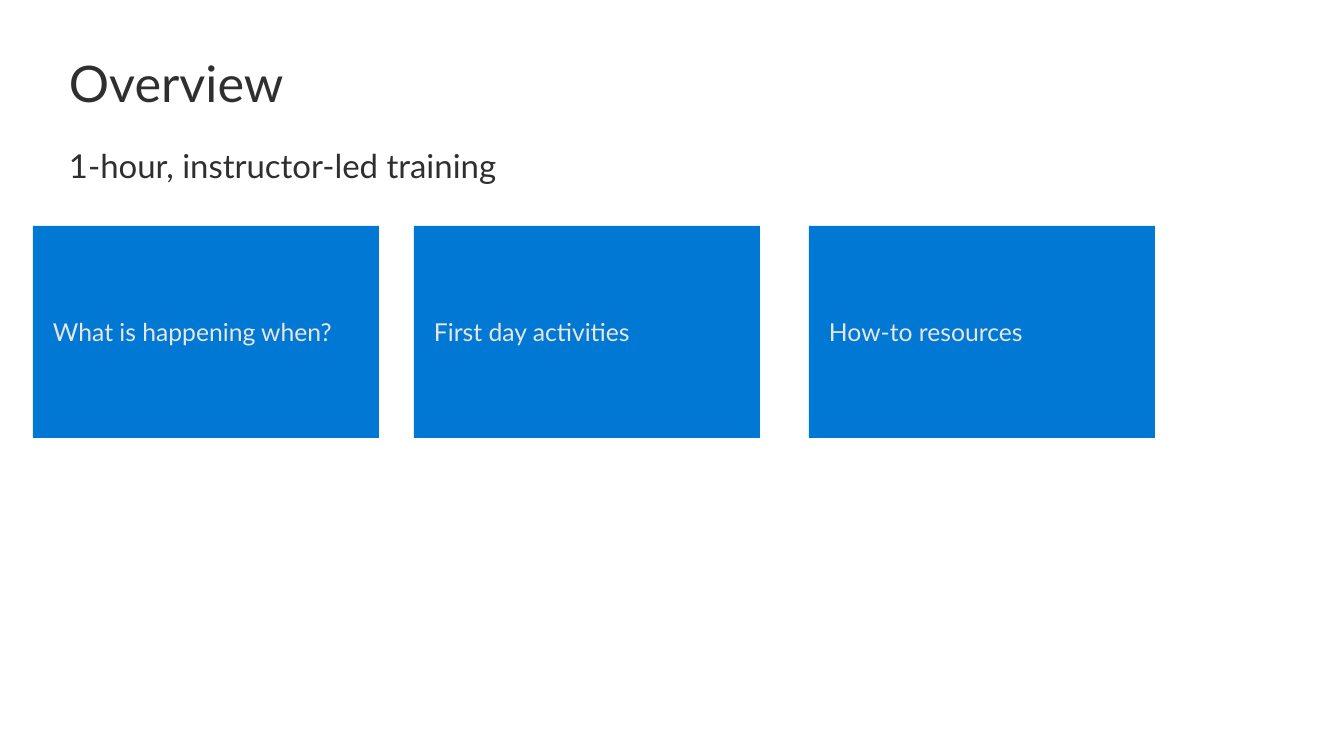
import pptx
import pptx.dml.color
import pptx.enum.shapes
import pptx.enum.text
import pptx.util

PX = 914400 / 98.8
SIZE = (1344, 756)
FONT = "Lato"
DARK, BLUE, PALE = "2F2F2F", "0078D4", "E6E6E6"

# text, top, height, point size
HEADS = [
    ("Overview", 54, 99, 36.7),
    ("1-hour, instructor-led training", 145, 56, 24),
]
HEAD_LEFT, HEAD_WIDTH = 59, 1284

# text, left
CARDS = [
    ("What is happening when?", 33),
    ("First day activities", 414),
    ("How-to resources", 809),
]
CARD_TOP, CARD_WIDTH, CARD_HEIGHT = 226, 346, 212


def px(*nums):
    return [pptx.util.Emu(round(n * PX)) for n in nums]


def color(code):
    return pptx.dml.color.RGBColor.from_string(code)


def write(shape, text, size, code, insets, anchor):
    frame = shape.text_frame
    frame.word_wrap = True
    frame.vertical_anchor = anchor
    (frame.margin_left, frame.margin_top,
     frame.margin_right, frame.margin_bottom) = px(*insets)
    para = frame.paragraphs[0]
    para.text = text
    para.alignment = pptx.enum.text.PP_ALIGN.LEFT
    para.line_spacing = 0.9
    para.font.name = FONT
    para.font.size = pptx.util.Pt(size)
    para.font.color.rgb = color(code)


def main():
    deck = pptx.Presentation()
    deck.slide_width, deck.slide_height = px(*SIZE)
    slide = deck.slides.add_slide(deck.slide_layouts[6])
    anchor = pptx.enum.text.MSO_ANCHOR

    for text, top, height, size in HEADS:
        box = slide.shapes.add_textbox(*px(HEAD_LEFT, top, HEAD_WIDTH, height))
        write(box, text, size, DARK, (10, 5, 10, 5), anchor.TOP)

    for text, left in CARDS:
        card = slide.shapes.add_shape(
            pptx.enum.shapes.MSO_SHAPE.RECTANGLE,
            *px(left, CARD_TOP, CARD_WIDTH, CARD_HEIGHT))
        card.shadow.inherit = False
        card.fill.solid()
        card.fill.fore_color.rgb = color(BLUE)
        card.line.fill.background()
        write(card, text, 18, PALE, (20, 20, 20, 16), anchor.MIDDLE)

    deck.save("out.pptx")


if __name__ == "__main__":
    main()
